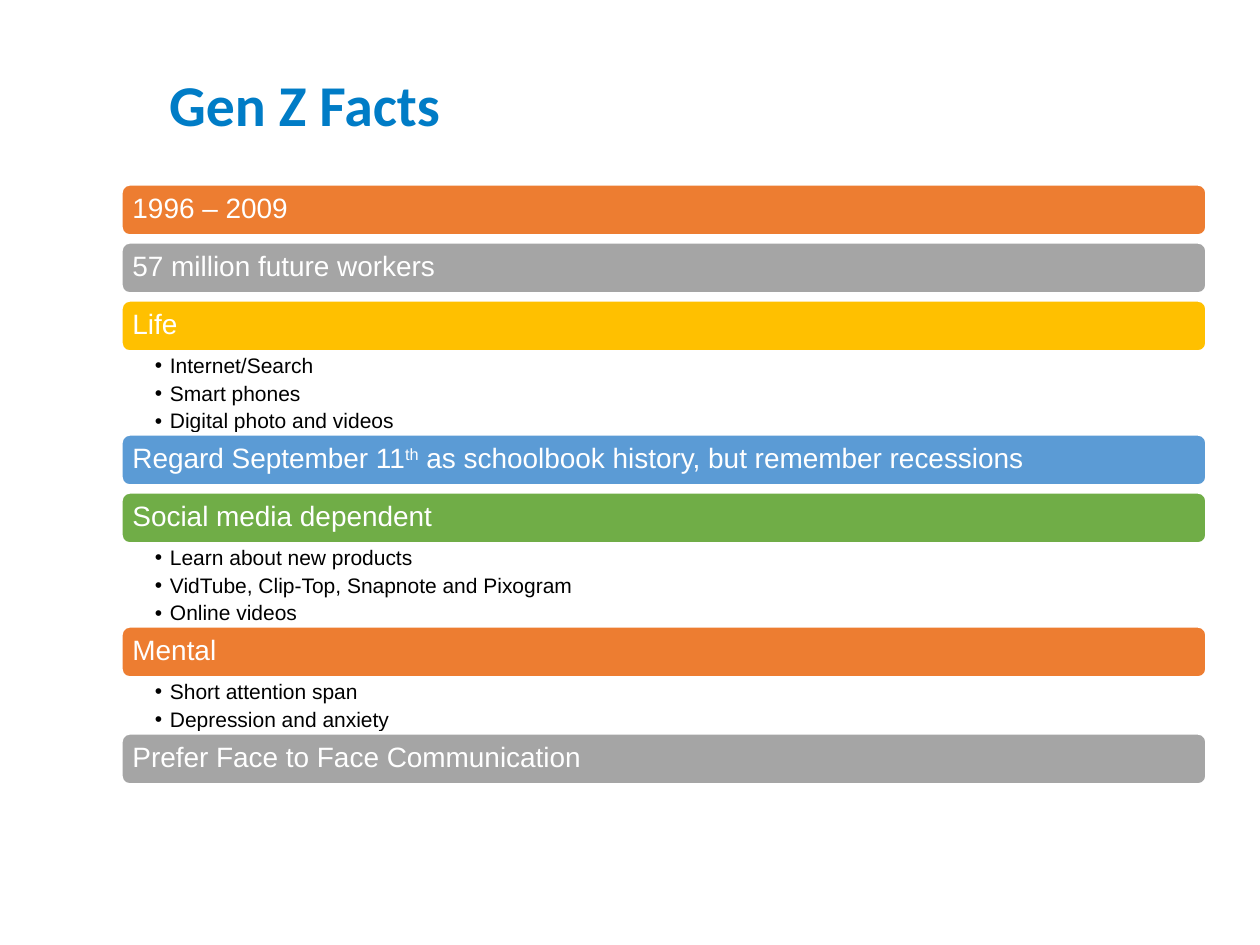
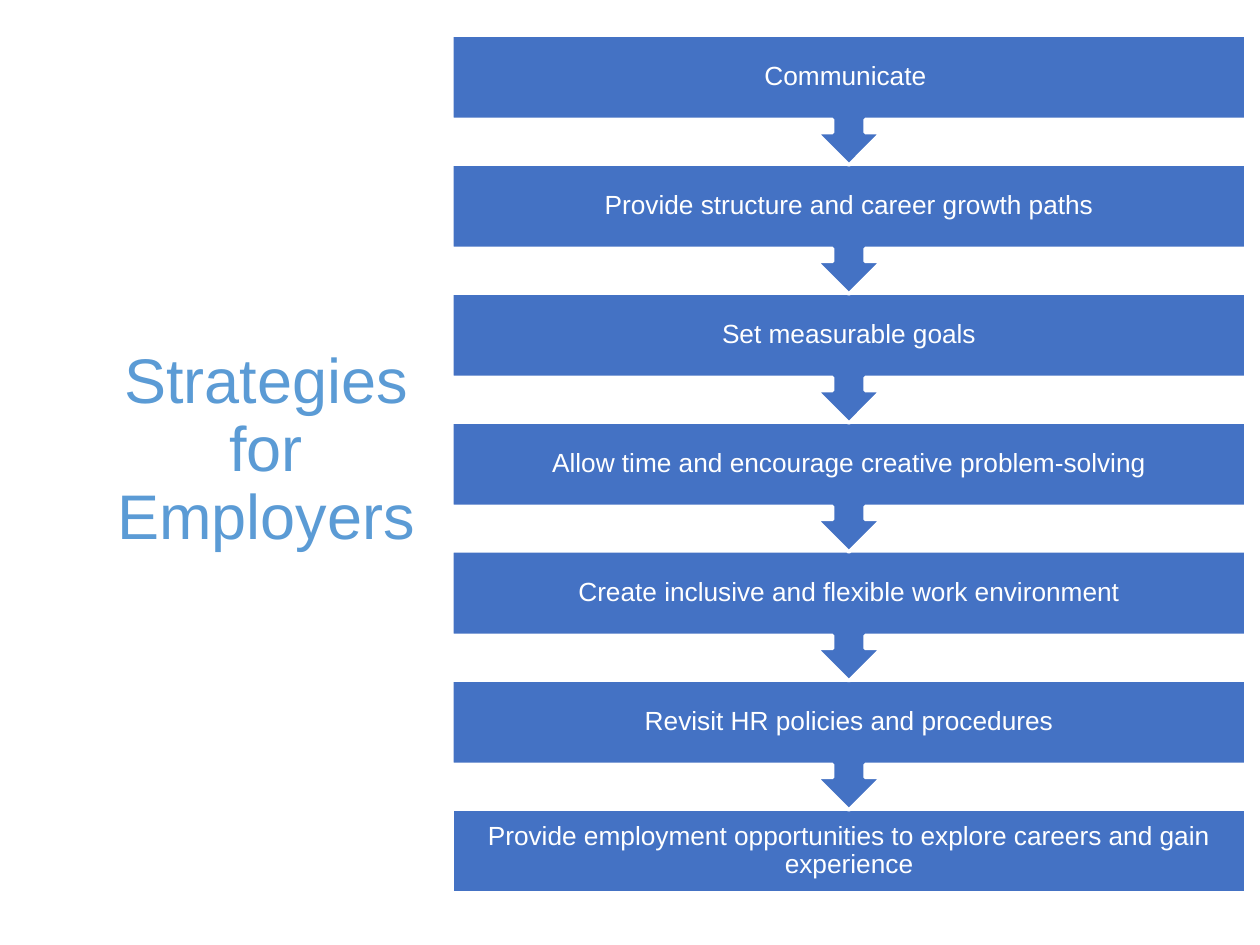
"""Build two slides: facts about Gen Z and strategies for employers."""
from dataclasses import dataclass

import pptx
import pptx.dml.color
import pptx.enum.shapes
import pptx.enum.text
import pptx.oxml.ns
import pptx.util
from lxml import etree

SHAPE = pptx.enum.shapes.MSO_SHAPE
ALIGN = pptx.enum.text.PP_ALIGN
ANCHOR = pptx.enum.text.MSO_ANCHOR


@dataclass(frozen=True)
class Theme:
    """Colours, fonts and type sizes shared by the slides."""
    white: str = "FFFFFF"
    black: str = "000000"
    heading: str = "007CC6"
    sky: str = "5B9BD5"
    step: str = "4472C4"
    bars: tuple = ("ED7D31", "A5A5A5", "FFC000", "5B9BD5", "70AD47")
    font: str = "Arial"
    heading_font: str = "Calibri"
    heading_size: int = 33
    strategy_size: int = 36
    bar_size: int = 16
    step_size: int = 15
    detail_size: int = 12
    outline: int = 2
    tight: float = 0.9


THEME = Theme()
PX_PER_INCH = 126

FACTS = (
    ("1996 – 2009", ()),
    ("57 million future workers", ()),
    ("Life", ("Internet/Search", "Smart phones", "Digital photo and videos")),
    ("Regard September 11^th^ as schoolbook history, but remember recessions", ()),
    ("Social media dependent",
     ("Learn about new products",
      "VidTube, Clip-Top, Snapnote and Pixogram",
      "Online videos")),
    ("Mental", ("Short attention span", "Depression and anxiety")),
    ("Prefer Face to Face Communication", ()),
)
STRATEGIES = (
    "Communicate ",
    "Provide structure and career growth paths",
    "Set measurable goals",
    "Allow time and encourage creative problem-solving",
    "Create inclusive and flexible work environment",
    "Revisit HR policies and procedures",
    "Provide employment opportunities to explore careers and gain experience",
)


def px(length):
    """Turn px into EMU."""
    return pptx.util.Emu(round(length * 914400 / PX_PER_INCH))


def rgb(colour):
    """Turn a hex string into a colour."""
    return pptx.dml.color.RGBColor.from_string(colour)


def place(shape, left, top, width, height):
    """Move and size a shape in px."""
    shape.left, shape.top = px(left), px(top)
    shape.width, shape.height = px(width), px(height)


def set_frame(frame, anchor, margins):
    """Set wrapping, anchor and the left, top, right and bottom margins."""
    frame.word_wrap = True
    frame.auto_size = pptx.enum.text.MSO_AUTO_SIZE.NONE
    frame.vertical_anchor = anchor
    (frame.margin_left, frame.margin_top,
     frame.margin_right, frame.margin_bottom) = map(px, margins)


def style(paragraph, size, colour, align=ALIGN.LEFT, spacing=THEME.tight,
          font=THEME.font, bold=False):
    """Format one paragraph."""
    paragraph.alignment = align
    paragraph.line_spacing = spacing
    paragraph.space_before = pptx.util.Pt(0)
    paragraph.font.name = font
    paragraph.font.size = pptx.util.Pt(size)
    paragraph.font.bold = bold
    paragraph.font.color.rgb = rgb(colour)


def write(paragraph, text):
    """Add text in which pieces between carets are superscript."""
    for index, piece in enumerate(text.split("^")):
        run = paragraph.add_run()
        run.text = piece
        if index % 2:
            run.font._element.set("baseline", "30000")


def set_title(slide, text, box, anchor, **look):
    """Fill, move and format the slide title."""
    title = slide.shapes.title
    place(title, *box)
    set_frame(title.text_frame, anchor, (13, 6, 13, 6))
    title.text_frame.text = text
    style(title.text_frame.paragraphs[0], **look)


def add_block(slide, kind, box, text, fill, margin, size, align):
    """Add a filled shape with a white outline and white text."""
    block = slide.shapes.add_shape(kind, *map(px, box))
    block.shadow.inherit = False
    block.fill.solid()
    block.fill.fore_color.rgb = rgb(fill)
    block.line.color.rgb = rgb(THEME.white)
    block.line.width = pptx.util.Pt(THEME.outline)
    set_frame(block.text_frame, ANCHOR.MIDDLE, (margin,) * 4)
    paragraph = block.text_frame.paragraphs[0]
    write(paragraph, text)
    style(paragraph, size, THEME.white, align)


def add_bullet(paragraph, indent):
    """Give a paragraph a hanging bullet."""
    properties = paragraph._p.get_or_add_pPr()
    properties.set("marL", str(px(indent)))
    properties.set("indent", str(-px(indent)))
    qn = pptx.oxml.ns.qn
    etree.SubElement(properties, qn("a:buFont"), typeface=THEME.font)
    etree.SubElement(properties, qn("a:buChar"), char="•")


def fill_details(body, details, box):
    """Turn a body placeholder into the bullet list under a bar."""
    place(body, *box)
    frame = body.text_frame
    set_frame(frame, ANCHOR.TOP, (34, 3, 15, 3))
    frame.text = "\n".join(details)
    for paragraph in frame.paragraphs:
        paragraph.level = 1
        add_bullet(paragraph, 15)
        style(paragraph, THEME.detail_size, THEME.black)
        paragraph.space_after = pptx.util.Pt(3)


def build_facts(deck):
    """Build the slide of coloured bars with bullet lists."""
    slide = deck.slides.add_slide(deck.slide_layouts.get_by_name("Comparison"))
    set_title(slide, "Gen Z Facts", (156, 63, 722, 83), ANCHOR.TOP,
              size=THEME.heading_size, colour=THEME.heading, spacing=1.0,
              font=THEME.heading_font, bold=True)
    bodies = [body for body in slide.placeholders
              if body.placeholder_format.idx in range(1, 5)]
    left, top, width, bar_height, gap = 121, 184, 1086, 52, 6
    for index, (fact, details) in enumerate(FACTS):
        add_block(slide, SHAPE.ROUNDED_RECTANGLE, (left, top, width, bar_height),
                  fact, THEME.bars[index % len(THEME.bars)], 9,
                  THEME.bar_size, ALIGN.LEFT)
        top += bar_height
        if details:
            height = 27 * len(details) + 1
            fill_details(bodies.pop(0), details, (left, top, width, height))
            top += height
        else:
            top += gap
    for body in bodies:
        body._element.getparent().remove(body._element)


def build_strategies(deck):
    """Build the slide of steps that lead down to one another."""
    slide = deck.slides.add_slide(deck.slide_layouts.get_by_name("Title Only"))
    set_title(slide, "Strategies for Employers", (102, 72, 328, 759),
              ANCHOR.MIDDLE, size=THEME.strategy_size, colour=THEME.sky,
              align=ALIGN.CENTER)
    last = len(STRATEGIES) - 1
    for index in reversed(range(len(STRATEGIES))):
        kind, height = ((SHAPE.RECTANGLE, 84) if index == last
                        else (SHAPE.DOWN_ARROW_CALLOUT, 130))
        add_block(slide, kind, (452, 35 + 129 * index, 794, height),
                  STRATEGIES[index], THEME.step, 15, THEME.step_size,
                  ALIGN.CENTER)


def main():
    """Build and save the deck."""
    deck = pptx.Presentation()
    deck.slide_width, deck.slide_height = px(1260), px(945)
    build_facts(deck)
    build_strategies(deck)
    deck.save("out.pptx")


if __name__ == "__main__":
    main()
